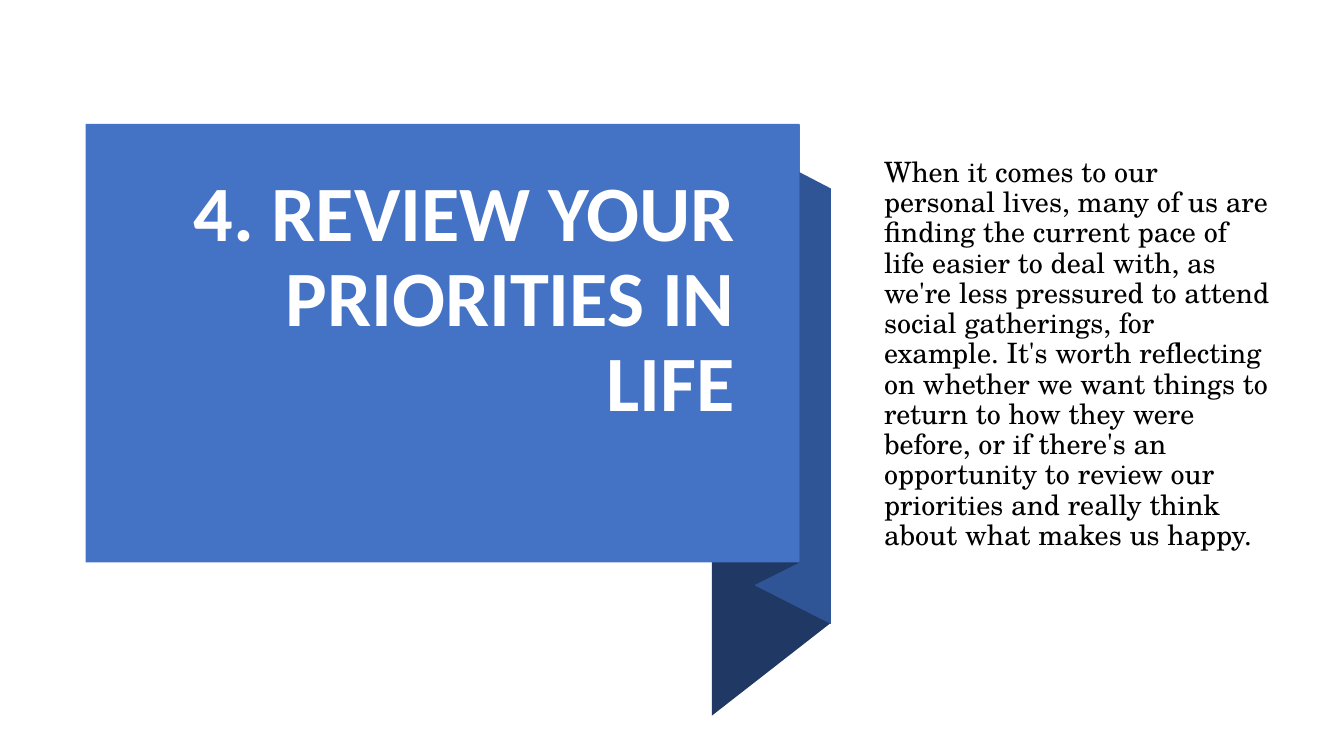
from dataclasses import dataclass

from pptx import Presentation
from pptx.dml.color import RGBColor
from pptx.enum.shapes import MSO_SHAPE
from pptx.enum.text import MSO_ANCHOR, PP_ALIGN
from pptx.util import Inches, Pt

RECTANGLE = MSO_SHAPE.RECTANGLE
MIDDLE = MSO_ANCHOR.MIDDLE
LEFT, RIGHT = PP_ALIGN.LEFT, PP_ALIGN.RIGHT


@dataclass(frozen=True)
class Theme:
    panel: str = "4472C4"
    ribbon: str = "2F5597"
    ribbon_shade: str = "203864"
    title_color: str = "FFFFFF"
    body_color: str = "000000"
    title_font: str = "Calibri"
    body_font: str = "TeX Gyre Schola"
    title_size: int = 56
    body_size: int = 20
    line_spacing: float = 0.9


THEME = Theme()

TITLE = "4. REVIEW YOUR PRIORITIES IN LIFE"
BODY = (
    "When it comes to our personal lives, many of us are finding the current "
    "pace of life easier to deal with, as we're less pressured to attend social "
    "gatherings, for example. It's worth reflecting on whether we want things to "
    "return to how they were before, or if there's an opportunity to review our "
    "priorities and really think about what makes us happy."
)


def paint(shape, color):
    shape.shadow.inherit = False
    shape.fill.solid()
    shape.fill.fore_color.rgb = RGBColor.from_string(color)
    shape.line.fill.background()


def add_text(slide, text, box, *, font, size, color, bold=False, align=LEFT,
             space_before=0, bottom_inset=0.05):
    frame = slide.shapes.add_textbox(*map(Inches, box)).text_frame
    frame.word_wrap = True
    frame.vertical_anchor = MIDDLE
    frame.margin_bottom = Inches(bottom_inset)
    paragraph = frame.paragraphs[0]
    paragraph.alignment = align
    paragraph.line_spacing = THEME.line_spacing
    paragraph.space_before = Pt(space_before)
    run = paragraph.add_run()
    run.text = text
    run.font.name = font
    run.font.size = Pt(size)
    run.font.bold = bold
    run.font.color.rgb = RGBColor.from_string(color)


def add_fold(slide, left, right, left_span, right_span, color):
    """Draw a ribbon piece with upright sides; each span is (top, bottom)."""
    corners = [(left, left_span[0]), (right, right_span[0]),
               (right, right_span[1]), (left, left_span[1])]
    points = [(Inches(x), Inches(y)) for x, y in corners]
    builder = slide.shapes.build_freeform(*points[0], scale=1.0)
    builder.add_line_segments(points[1:], close=True)
    paint(builder.convert_to_shape(), color)


def add_ribbon(slide, box):
    """Draw the folded ribbon hanging behind the right edge of the panel box."""
    left, top, width, height = box
    edge, bottom = left + width, top + height
    outer, inner, tail = edge + 0.31, edge - 0.44, edge - 0.87
    add_fold(slide, tail, outer, (top + 1.61, bottom + 1.52),
             (top + 0.69, bottom + 0.6), THEME.ribbon_shade)
    add_fold(slide, inner, outer, (top + 0.25, bottom + 0.23),
             (top + 0.64, bottom + 0.61), THEME.ribbon)
    add_fold(slide, inner, edge, (top + 0.23, bottom + 0.22),
             (top + 0.01, bottom), THEME.ribbon_shade)


def add_title_panel(slide, box):
    left, top, width, height = box
    add_ribbon(slide, box)
    paint(slide.shapes.add_shape(RECTANGLE, *map(Inches, box)), THEME.panel)
    title_box = (left + 0.65, top + 0.35, width - 1.19, height - 0.69)
    add_text(slide, TITLE, title_box, font=THEME.title_font,
             size=THEME.title_size, color=THEME.title_color, bold=True,
             align=RIGHT, bottom_inset=0.89)


def add_body(slide, box):
    add_text(slide, BODY, box, font=THEME.body_font, size=THEME.body_size,
             color=THEME.body_color, space_before=10)


def main():
    deck = Presentation()
    deck.slide_width, deck.slide_height = Inches(13.33), Inches(7.5)
    slide = deck.slides.add_slide(deck.slide_layouts[6])
    add_title_panel(slide, (0.85, 1.23, 7.08, 4.35))
    add_body(slide, (8.67, 1.62, 4.03, 3.8))
    deck.save("out.pptx")


if __name__ == "__main__":
    main()
